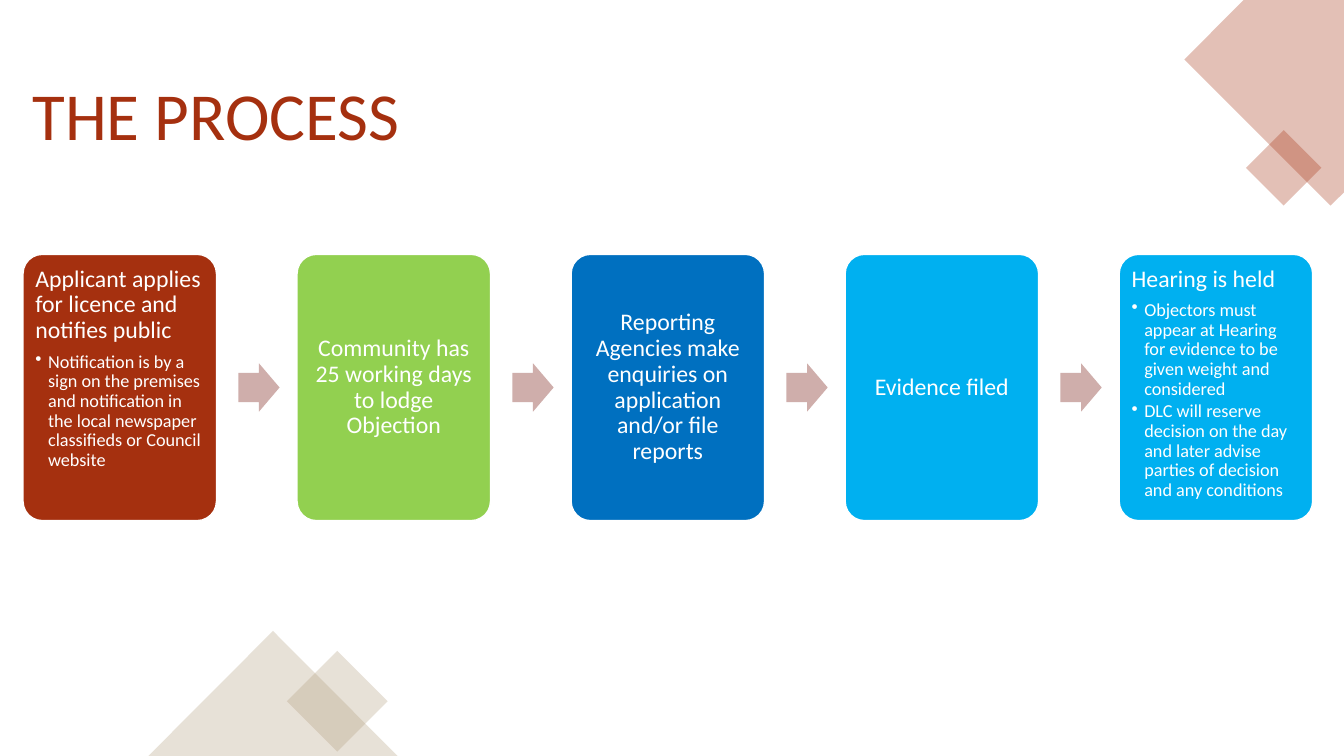
from lxml.etree import SubElement
from pptx import Presentation
from pptx.dml.color import RGBColor
from pptx.enum.shapes import MSO_SHAPE
from pptx.enum.text import MSO_ANCHOR, MSO_AUTO_SIZE, PP_ALIGN
from pptx.oxml.ns import qn
from pptx.util import Cm, Pt

RUST = RGBColor(0xA5, 0x30, 0x0F)
TAN = RGBColor(0xB1, 0x9C, 0x7D)
GREEN = RGBColor(0x92, 0xD0, 0x50)
BLUE = RGBColor(0x00, 0x70, 0xC0)
SKY = RGBColor(0x00, 0xB0, 0xF0)
PINK = RGBColor(0xCF, 0xAE, 0xAB)
WHITE = RGBColor(0xFF, 0xFF, 0xFF)

STEPS = [
    (RUST, "Applicant applies for licence and notifies public",
     ["Notification is by a sign on the premises and notification in the "
      "local newspaper classifieds or Council website"]),
    (GREEN, "Community has 25 working days to lodge Objection", []),
    (BLUE, "Reporting Agencies make enquiries on application and/or file reports", []),
    (SKY, "Evidence filed", []),
    (SKY, "Hearing is held",
     ["Objectors must appear at Hearing for evidence to be given weight and considered",
      "DLC will reserve decision on the day and later advise parties of decision "
      "and any conditions"]),
]


def write(p, text, size, color=WHITE, align=PP_ALIGN.LEFT, after=6, bullet=False):
    p.alignment = align
    p.line_spacing = 0.9
    p.space_before = Pt(0)
    p.space_after = Pt(after)
    r = p.add_run()
    r.text = text
    r.font.name = "Calibri"
    r.font.size = Pt(size)
    r.font.color.rgb = color
    if bullet:
        pPr = p._p.get_or_add_pPr()
        pPr.set("marL", str(Cm(0.32)))
        pPr.set("indent", str(-Cm(0.32)))
        SubElement(pPr, qn("a:buChar")).set("char", "•")


def paint(sp, color, opacity=100):
    sp.shadow.inherit = False
    sp.fill.solid()
    sp.fill.fore_color.rgb = color
    sp.line.fill.background()
    if opacity < 100:
        clr = sp._element.spPr.find(qn("a:solidFill"))[0]
        SubElement(clr, qn("a:alpha")).set("val", str(opacity * 1000))


def add_shape(s, kind, x, y, w, h, color, opacity=100):
    sp = s.shapes.add_shape(kind, Cm(x), Cm(y), Cm(w), Cm(h))
    paint(sp, color, opacity)
    return sp


def add_top_corner(s, x, y, w):
    corners = [(w - 2.53, 0), (x, y + 1.5), (x + 3.68, y + 5.18), (w, y + 4.85)]
    points = [(round(px * 100), round(py * 100)) for px, py in corners]
    fb = s.shapes.build_freeform(round(w * 100), round(y * 100), scale=Cm(1) / 100)
    fb.add_line_segments(points, close=True)
    paint(fb.convert_to_shape(), RUST, 30)
    add_shape(s, MSO_SHAPE.DIAMOND, x + 1.55, y + 3.28, 1.9, 1.9, RUST, 30)


def add_bottom_corner(s, x, y):
    add_shape(s, MSO_SHAPE.DIAMOND, x + 3.49, y + 0.5, 2.54, 2.54, TAN, 30)
    add_shape(s, MSO_SHAPE.ISOSCELES_TRIANGLE, x, y, 6.28, 3.15, TAN, 30)


def add_title(s, text, x, y, w, h):
    sp = s.shapes.title
    sp.left, sp.top, sp.width, sp.height = Cm(x), Cm(y), Cm(w), Cm(h)
    tf = sp.text_frame
    tf.auto_size = MSO_AUTO_SIZE.NONE
    tf.vertical_anchor = MSO_ANCHOR.TOP
    write(tf.paragraphs[0], text, 48, color=RUST)


def add_step(s, x, y, w, h, color, heading, details):
    sp = add_shape(s, MSO_SHAPE.ROUNDED_RECTANGLE, x, y, w, h, color)
    sp.adjustments[0] = 0.1
    sp.line.color.rgb = WHITE
    sp.line.width = Pt(1)
    tf = sp.text_frame
    tf.word_wrap = True
    tf.margin_left = tf.margin_right = tf.margin_top = tf.margin_bottom = Cm(0.17)
    tf.vertical_anchor = MSO_ANCHOR.TOP if details else MSO_ANCHOR.MIDDLE
    align = PP_ALIGN.LEFT if details else PP_ALIGN.CENTER
    write(tf.paragraphs[0], heading, 17, align=align)
    for detail in details:
        write(tf.add_paragraph(), detail, 13, after=2, bullet=True)


def add_process(s, x, y, w, h):
    step_w = 0.15 * w
    pitch = (w - step_w) / (len(STEPS) - 1)
    arrow_w, arrow_h = 1.04, 1.22
    for i, step in enumerate(STEPS):
        left = x + i * pitch
        if i:
            arrow = add_shape(s, MSO_SHAPE.RIGHT_ARROW, left - 1.48,
                              y + (h - arrow_h) / 2, arrow_w, arrow_h, PINK)
            arrow.adjustments[0] = 0.6
        add_step(s, left, y, step_w, h, *step)


def main():
    prs = Presentation()
    prs.slide_width, prs.slide_height = Cm(33.87), Cm(19.05)
    s = prs.slides.add_slide(prs.slide_layouts[5])
    add_top_corner(s, 29.85, 0, 33.87)
    add_bottom_corner(s, 3.74, 15.9)
    add_process(s, 0.58, 6.41, 32.5, 6.71)
    add_title(s, "THE PROCESS", 0.56, 1.96, 11.23, 2.11)
    prs.save("out.pptx")


if __name__ == "__main__":
    main()
